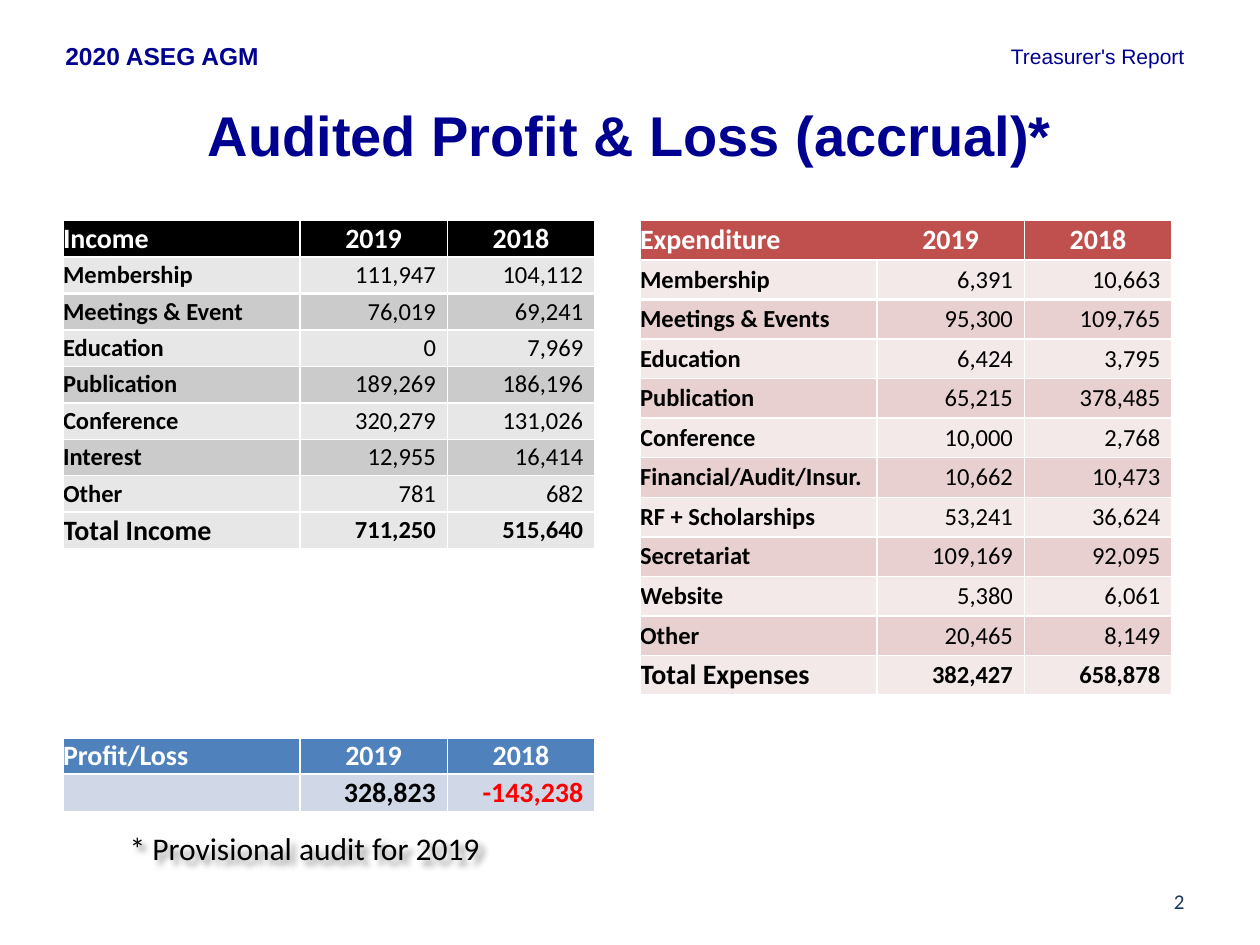
"""Build the audited profit and loss slide of a treasurer's report."""
from dataclasses import dataclass

from lxml import etree
from pptx import Presentation
from pptx.dml.color import RGBColor
from pptx.enum.text import MSO_ANCHOR, PP_ALIGN
from pptx.oxml.ns import qn
from pptx.util import Inches, Pt

LEFT, CENTER, RIGHT = PP_ALIGN.LEFT, PP_ALIGN.CENTER, PP_ALIGN.RIGHT
TOP, MIDDLE = MSO_ANCHOR.TOP, MSO_ANCHOR.MIDDLE


@dataclass(frozen=True)
class Theme:
    heading_font: str = "Arial"
    body_font: str = "Calibri"
    navy: str = "000090"
    slate: str = "17375E"
    black: str = "000000"
    white: str = "FFFFFF"
    red: str = "FF0000"
    title_size: int = 32
    note_size: int = 18
    strong_size: int = 16
    body_size: int = 14
    small_size: int = 12
    thin_rule: float = 1
    thick_rule: float = 1.5


THEME = Theme()


@dataclass(frozen=True)
class Section:
    first_row: int
    label: str
    header_fill: str
    band_fills: tuple[str, str]
    rows: list[tuple[str, str, str]]
    thick_below: tuple[int, ...]
    total_size: int = THEME.body_size
    header_divided: bool = True


@dataclass(frozen=True)
class Statement:
    left: float
    height: float
    row_count: int
    sections: list[Section]


TABLE_TOP = 1.75
COLUMN_WIDTHS = (1.88, 1.17, 1.17)
YEARS = ("2019", "2018")
INCOME = Section(0, "Income", "000000", ("E7E7E7", "CBCBCB"), [
    ("Membership", "111,947", "104,112"),
    ("Meetings & Event", "76,019", "69,241"),
    ("Education", "0", "7,969"),
    ("Publication", "189,269", "186,196"),
    ("Conference", "320,279", "131,026"),
    ("Interest", "12,955", "16,414"),
    ("Other", "781", "682"),
    ("Total Income", "711,250", "515,640"),
], thick_below=(1,))
PROFIT = Section(14, "Profit/Loss", "4F81BD", ("D0D8E8", "D0D8E8"), [
    ("", "328,823", "-143,238"),
], thick_below=(0,), total_size=THEME.strong_size)
EXPENDITURE = Section(0, "Expenditure", "C0504D", ("F4E9E9", "E8D0D0"), [
    ("Membership", "6,391", "10,663"),
    ("Meetings & Events", "95,300", "109,765"),
    ("Education", "6,424", "3,795"),
    ("Publication", "65,215", "378,485"),
    ("Conference", "10,000", "2,768"),
    ("Financial/Audit/Insur.", "10,662", "10,473"),
    ("RF + Scholarships", "53,241", "36,624"),
    ("Secretariat", "109,169", "92,095"),
    ("Website", "5,380", "6,061"),
    ("Other", "20,465", "8,149"),
    ("Total Expenses", "382,427", "658,878"),
], thick_below=(0, 1), header_divided=False)
STATEMENTS = [
    Statement(0.5, 4.63, 16, [INCOME, PROFIT]),
    Statement(5.08, 4.08, 13, [EXPENDITURE]),
]


def write_text(frame, text: str, *, size: float, color: str, font: str = THEME.body_font,
               bold: bool = False, align=LEFT, line_spacing: float | None = None) -> None:
    paragraph = frame.paragraphs[0]
    paragraph.alignment = align
    paragraph.line_spacing = line_spacing
    run = paragraph.add_run()
    run.text = text
    run.font.size, run.font.name, run.font.bold = Pt(size), font, bold
    run.font.color.rgb = RGBColor.from_string(color)


def add_text_box(slide, box: tuple[float, ...], text: str, *, anchor=TOP, **text_format):
    shape = slide.shapes.add_textbox(*map(Inches, box))
    frame = shape.text_frame
    frame.word_wrap = True
    frame.vertical_anchor = anchor
    write_text(frame, text, **text_format)
    return shape


def add_shadow(shape) -> None:
    effects = etree.SubElement(shape._element.spPr, qn("a:effectLst"))
    shadow = etree.SubElement(effects, qn("a:outerShdw"), blurRad=str(Inches(0.05)),
                              dist=str(Inches(0.05)), dir="2700000", algn="tl")
    color = etree.SubElement(shadow, qn("a:srgbClr"), val=THEME.black)
    etree.SubElement(color, qn("a:alpha"), val="43000")


def set_border(cell, side: str, width: float) -> None:
    line = etree.SubElement(cell._tc.get_or_add_tcPr(), qn(f"a:ln{side}"), w=str(Pt(width)))
    if width:
        fill = etree.SubElement(line, qn("a:solidFill"))
        etree.SubElement(fill, qn("a:srgbClr"), val=THEME.white)
    else:
        etree.SubElement(line, qn("a:noFill"))


def fill_cell(cell, text: str, fill: str, *, inset: float = 0, **text_format) -> None:
    cell.margin_right = Inches(inset)
    cell.fill.solid()
    cell.fill.fore_color.rgb = RGBColor.from_string(fill)
    write_text(cell.text_frame, text, **text_format)


def prepare_cells(table, sections: list[Section]) -> None:
    thick_rows = {section.first_row + row for section in sections for row in section.thick_below}
    open_rows = {section.first_row for section in sections if not section.header_divided}
    for row in range(len(table.rows)):
        for column in range(len(COLUMN_WIDTHS)):
            cell = table.cell(row, column)
            cell.margin_left = cell.margin_right = cell.margin_top = cell.margin_bottom = 0
            cell.vertical_anchor = MIDDLE
            widths = {
                "L": 0 if row in open_rows and column == 1 else THEME.thin_rule,
                "R": 0 if row in open_rows and column == 0 else THEME.thin_rule,
                "T": THEME.thick_rule if row - 1 in thick_rows else THEME.thin_rule,
                "B": THEME.thick_rule if row in thick_rows else THEME.thin_rule,
            }
            for side, width in widths.items():
                set_border(cell, side, width)
            cell.fill.background()


def fill_section(table, section: Section) -> None:
    for column, text in enumerate((section.label, *YEARS)):
        fill_cell(table.cell(section.first_row, column), text, section.header_fill,
                  size=THEME.strong_size, color=THEME.white, bold=True,
                  align=CENTER if column else LEFT)
    for index, (label, *amounts) in enumerate(section.rows):
        is_total = index == len(section.rows) - 1
        fill = section.band_fills[0 if is_total else index % 2]
        row = section.first_row + 1 + index
        fill_cell(table.cell(row, 0), label, fill, color=THEME.black, bold=True,
                  size=THEME.strong_size if is_total else THEME.body_size)
        for column, amount in enumerate(amounts, start=1):
            fill_cell(table.cell(row, column), amount, fill, inset=0.09, align=RIGHT,
                      bold=is_total, size=section.total_size if is_total else THEME.body_size,
                      color=THEME.red if amount.startswith("-") else THEME.black)


def add_statement(slide, statement: Statement) -> None:
    box = (statement.left, TABLE_TOP, sum(COLUMN_WIDTHS), statement.height)
    table = slide.shapes.add_table(statement.row_count, len(COLUMN_WIDTHS),
                                   *map(Inches, box)).table
    table.first_row = table.horz_banding = False
    for column, width in zip(table.columns, COLUMN_WIDTHS):
        column.width = Inches(width)
    for row in table.rows:
        row.height = Inches(statement.height / statement.row_count)
    prepare_cells(table, statement.sections)
    for section in statement.sections:
        fill_section(table, section)
    for cell in table.iter_cells():
        if not cell.text_frame.paragraphs[0].runs:
            write_text(cell.text_frame, "", size=THEME.small_size, color=THEME.black)


def main() -> None:
    presentation = Presentation()
    presentation.slide_width, presentation.slide_height = Inches(10), Inches(7.5)
    slide = presentation.slides.add_slide(presentation.slide_layouts[6])
    heading = {"font": THEME.heading_font, "color": THEME.navy}
    add_text_box(slide, (5, 0.3, 4.5, 0.3), "Treasurer's Report",
                 size=THEME.small_size, align=RIGHT, **heading)
    add_text_box(slide, (0.5, 0.75, 9, 0.8), "Audited Profit & Loss (accrual)*",
                 size=THEME.title_size, bold=True, align=CENTER, **heading)
    add_text_box(slide, (0.42, 0.28, 4.58, 0.34), "2020 ASEG AGM",
                 size=THEME.body_size, bold=True, **heading)
    add_text_box(slide, (7.17, 6.95, 2.33, 0.4), "2", anchor=MIDDLE,
                 size=THEME.small_size, color=THEME.slate, align=RIGHT)
    for statement in STATEMENTS:
        add_statement(slide, statement)
    note = add_text_box(slide, (0.93, 6.27, 3.29, 0.62), "* Provisional audit for 2019",
                        anchor=MIDDLE, size=THEME.note_size, color=THEME.black, line_spacing=2.0)
    note.text_frame.margin_top = note.text_frame.margin_bottom = 0
    add_shadow(note)
    presentation.save("out.pptx")


if __name__ == "__main__":
    main()
